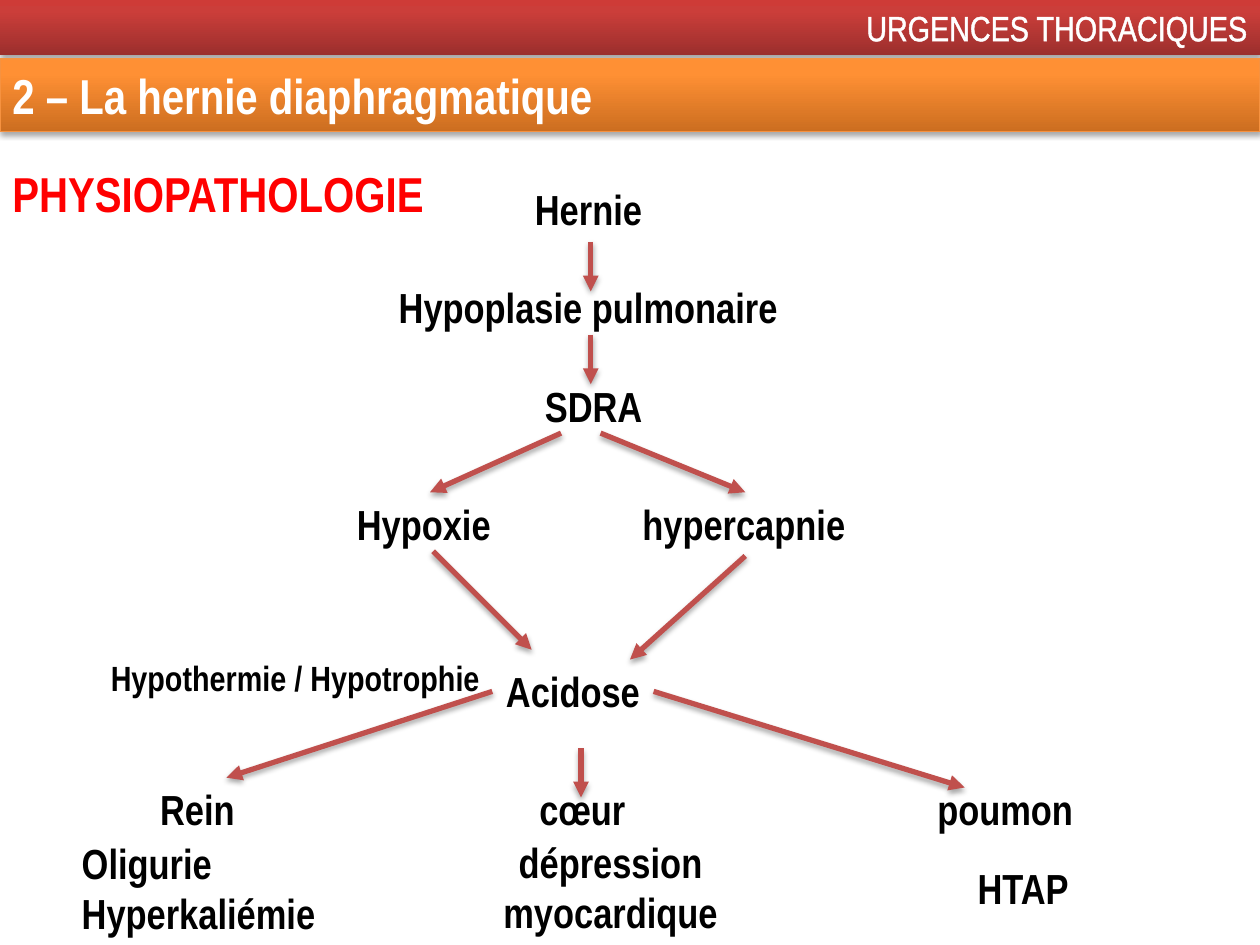
from copy import deepcopy
from dataclasses import dataclass
from typing import Optional

from lxml import etree
from pptx import Presentation
from pptx.dml.color import RGBColor
from pptx.enum.shapes import MSO_CONNECTOR, MSO_SHAPE
from pptx.enum.text import MSO_ANCHOR, MSO_AUTO_SIZE, PP_ALIGN
from pptx.oxml.ns import qn
from pptx.util import Pt

LEFT, CENTER, RIGHT = PP_ALIGN.LEFT, PP_ALIGN.CENTER, PP_ALIGN.RIGHT
TOP, MIDDLE = MSO_ANCHOR.TOP, MSO_ANCHOR.MIDDLE
FIT_SHAPE = MSO_AUTO_SIZE.SHAPE_TO_FIT_TEXT
RECTANGLE, STRAIGHT = MSO_SHAPE.RECTANGLE, MSO_CONNECTOR.STRAIGHT
SIDE_TOP, SIDE_LEFT, SIDE_BOTTOM, SIDE_RIGHT = range(4)

FONT = "Arial Narrow"
COLORS = {
    "white": "FFFFFF", "black": "000000", "heading": "FF0000",
    "arrow": "C0504D", "orange_line": "F69240",
}
RED_GRADIENT = ("9C2F2D", "CB3E3A", "CE3B37")
ORANGE_GRADIENT = ("CC6E20", "FF9034", "FF9136")
GRADIENT_POSITIONS = (0, 0.8, 1)


@dataclass
class Label:
    text: str
    left: float
    top: float
    width: float
    height: float = 36.4
    size: float = 24
    color: str = "black"
    bold: bool = True
    align: PP_ALIGN = LEFT
    anchor: MSO_ANCHOR = TOP
    wrap: bool = False


@dataclass
class Bar:
    label: Label
    gradient: tuple
    line: Optional[str] = None
    outlined: bool = False


@dataclass
class Arrow:
    start: tuple
    end: tuple
    start_joint: Optional[tuple] = None
    end_joint: Optional[tuple] = None


BARS = [
    Bar(Label("URGENCES THORACIQUES", 0, 0, 720, 31.5, 20, "white", False, RIGHT, wrap=True),
        RED_GRADIENT, outlined=True),
    Bar(Label("2 – La hernie diaphragmatique", 0, 33.8, 720, 41.2, 28, "white", wrap=True),
        ORANGE_GRADIENT, "orange_line"),
]

LABELS = [
    Label("PHYSIOPATHOLOGIE", 0, 90, 252.7, 41.2, 28, "heading"),
    # Cascade from the hernia to acidosis
    Label("Hernie", 298, 101.3, 76.5, align=CENTER),
    Label("Hypoplasie pulmonaire", 219.6, 157.5, 233, align=CENTER),
    Label("SDRA", 303.5, 213.8, 71.5, align=CENTER),
    Label("Hypoxie", 196.8, 281.3, 97.9),
    Label("hypercapnie", 360, 281.3, 131.8),
    Label("Acidose", 281.3, 376.9, 92.2, align=CENTER),
    Label("Hypothermie / Hypotrophie", 56.2, 371.3, 242, 31.5, 20, wrap=True),
    # Affected organs
    Label("Rein", 84.4, 444.4, 57.6),
    Label("cœur", 300.5, 444.4, 64.5, align=CENTER),
    Label("poumon", 528.5, 444.4, 92.9),
    # Consequences
    Label("Oligurie\nHyperkaliémie", 39.6, 474.5, 149.8, 65.5, anchor=MIDDLE),
    Label("dépression myocardique", 247.7, 474.5, 202.3, 65.5, align=CENTER, wrap=True),
    Label("HTAP", 551.5, 489.6, 72.7),
]

ARROWS = [
    Arrow((337.6, 138.3), (337.6, 166.5)),
    Arrow((337.6, 191.3), (337.6, 219.5)),
    Arrow((320.6, 247.5), (245.7, 281.3), end_joint=("Hypoxie", SIDE_TOP)),
    Arrow((343.2, 247.5), (425.9, 281.3), end_joint=("hypercapnie", SIDE_TOP)),
    Arrow((247.5, 315), (303.8, 371.3)),
    Arrow((425.9, 317.7), (360, 376.9), start_joint=("hypercapnie", SIDE_BOTTOM)),
    Arrow((281.3, 395.1), (129.4, 444.4), start_joint=("Acidose", SIDE_LEFT)),
    Arrow((373.5, 395.1), (551.3, 450), start_joint=("Acidose", SIDE_RIGHT)),
    Arrow((332, 427.5), (332, 455.7)),
]


def color(name: str) -> RGBColor:
    return RGBColor.from_string(COLORS[name])


def set_attributes(target, values: dict) -> None:
    for name, value in values.items():
        setattr(target, name, value)


def add_shadow(shape) -> None:
    effects = etree.SubElement(shape._element.spPr, qn("a:effectLst"))
    shadow = etree.SubElement(effects, qn("a:outerShdw"), blurRad="40000",
                              dist="23000", dir="5400000", rotWithShape="0")
    tint = etree.SubElement(shadow, qn("a:srgbClr"), val=COLORS["black"])
    etree.SubElement(tint, qn("a:alpha"), val="35000")


def write_text(shape, label: Label) -> None:
    frame = shape.text_frame
    frame.text = label.text
    set_attributes(frame, {"word_wrap": label.wrap, "auto_size": FIT_SHAPE,
                           "vertical_anchor": label.anchor})
    for paragraph in frame.paragraphs:
        paragraph.alignment = label.align
        for run in paragraph.runs:
            set_attributes(run.font, {"name": FONT, "size": Pt(label.size), "bold": label.bold})
            run.font.color.rgb = color(label.color)


def box(label: Label) -> list:
    return [Pt(value) for value in (label.left, label.top, label.width, label.height)]


def add_bar(slide, bar: Bar) -> None:
    shape = slide.shapes.add_shape(RECTANGLE, *box(bar.label))
    shape.fill.gradient()
    shape.fill.gradient_angle = 90
    # The default gradient has two stops; this one needs three
    stop_list = shape._element.spPr.find(".//" + qn("a:gsLst"))
    stop_list.append(deepcopy(stop_list[-1]))
    for stop, position, value in zip(shape.fill.gradient_stops, GRADIENT_POSITIONS, bar.gradient):
        stop.position = position
        stop.color.rgb = RGBColor.from_string(value)
    if bar.line:
        shape.line.color.rgb = color(bar.line)
        shape.line.width = Pt(0.75)
    else:
        shape.line.fill.background()
    add_shadow(shape)
    write_text(shape, bar.label)
    if bar.outlined:
        properties = shape.text_frame.paragraphs[0].runs[0].font._element
        outline = etree.Element(qn("a:ln"), w=str(Pt(1.45)))
        fill = etree.SubElement(outline, qn("a:solidFill"))
        etree.SubElement(fill, qn("a:srgbClr"), val=COLORS["white"])
        properties.insert(0, outline)


def add_label(slide, label: Label):
    shape = slide.shapes.add_textbox(*box(label))
    write_text(shape, label)
    return shape


def add_arrow(slide, arrow: Arrow, boxes: dict) -> None:
    points = [Pt(value) for value in arrow.start + arrow.end]
    connector = slide.shapes.add_connector(STRAIGHT, *points)
    if arrow.start_joint:
        name, side = arrow.start_joint
        connector.begin_connect(boxes[name], side)
    if arrow.end_joint:
        name, side = arrow.end_joint
        connector.end_connect(boxes[name], side)
    connector.line.color.rgb = color("arrow")
    connector.line.width = Pt(3)
    etree.SubElement(connector.line._get_or_add_ln(), qn("a:tailEnd"), type="triangle")
    add_shadow(connector)


def main() -> None:
    presentation = Presentation()
    set_attributes(presentation, {"slide_width": Pt(720), "slide_height": Pt(540)})
    slide = presentation.slides.add_slide(presentation.slide_layouts[6])
    for bar in BARS:
        add_bar(slide, bar)
    boxes = {label.text: add_label(slide, label) for label in LABELS}
    for arrow in ARROWS:
        add_arrow(slide, arrow, boxes)
    presentation.save("out.pptx")


if __name__ == "__main__":
    main()
